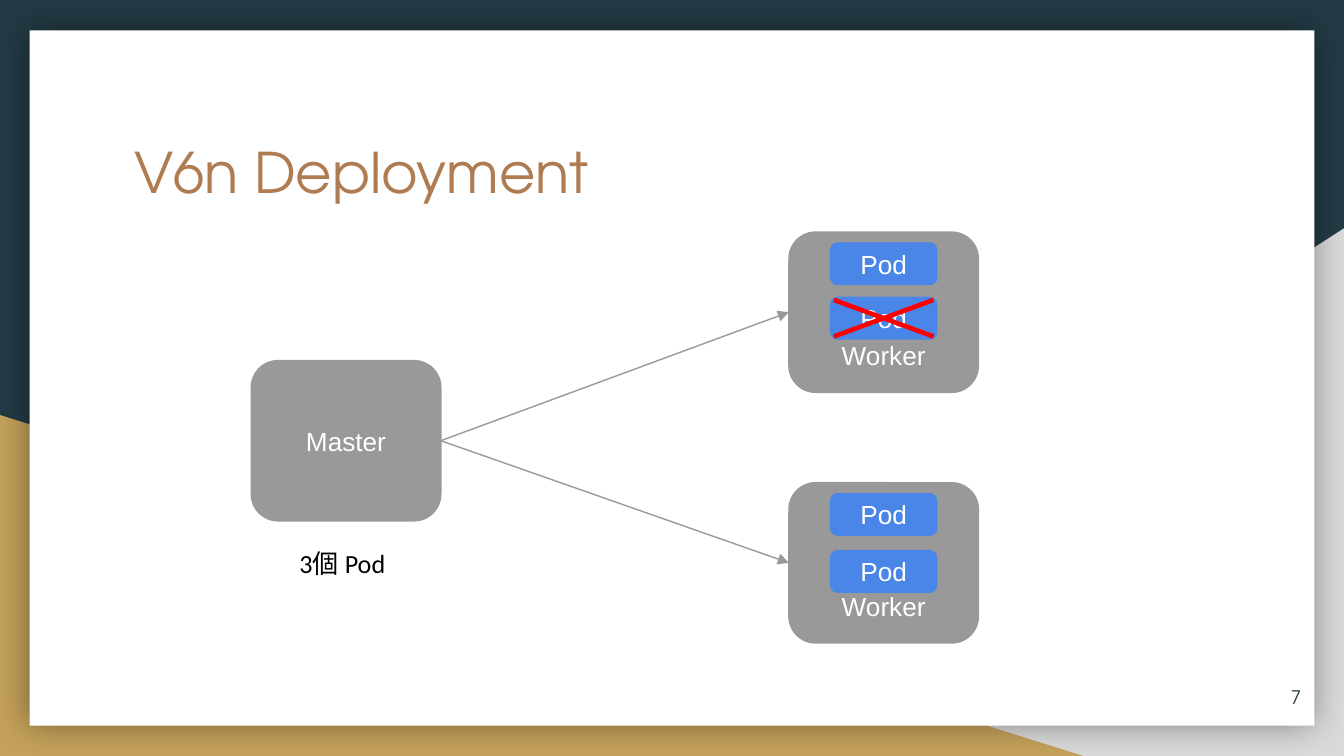
from dataclasses import dataclass
from typing import NamedTuple

from lxml import etree
from pptx import Presentation
from pptx.dml.color import RGBColor
from pptx.enum.shapes import MSO_CONNECTOR, MSO_SHAPE
from pptx.enum.text import MSO_ANCHOR, PP_ALIGN
from pptx.oxml import parse_xml
from pptx.oxml.ns import nsdecls, qn
from pptx.util import Inches, Pt

WIDE, HIGH = 10, 5.625
ROUND, RECT = MSO_SHAPE.ROUNDED_RECTANGLE, MSO_SHAPE.RECTANGLE
WEDGE, CROSS = MSO_SHAPE.RIGHT_TRIANGLE, MSO_SHAPE.MATH_MULTIPLY
TOP, MIDDLE, BOTTOM = MSO_ANCHOR.TOP, MSO_ANCHOR.MIDDLE, MSO_ANCHOR.BOTTOM
LEFT, CENTER, RIGHT = PP_ALIGN.LEFT, PP_ALIGN.CENTER, PP_ALIGN.RIGHT
LEFT_SIDE, RIGHT_SIDE = 1, 3


@dataclass(frozen=True)
class Theme:
    navy: str = "233A44"
    gold: str = "C4A15A"
    silver: str = "D9D9D9"
    white: str = "FFFFFF"
    black: str = "000000"
    copper: str = "AF7B51"
    gray: str = "999999"
    blue: str = "4A86E8"
    red: str = "FF0000"
    head: str = "TeX Gyre Adventor"
    body: str = "Arial"
    note: str = "Calibri"
    title: int = 30
    label: int = 14
    small: int = 10
    line: float = 0.75


THEME = Theme()


class Box(NamedTuple):
    """Left, top, width and height in percent of the slide."""
    x: float
    y: float
    w: float
    h: float

    def place(self):
        return (Inches(self.x * WIDE / 100), Inches(self.y * HIGH / 100),
                Inches(self.w * WIDE / 100), Inches(self.h * HIGH / 100))


class Style(NamedTuple):
    size: int
    font: str
    color: str
    align: PP_ALIGN = LEFT
    anchor: MSO_ANCHOR = TOP


class Worker(NamedTuple):
    """Top of a worker and the offsets of its pods, in percent."""
    y: float
    pods: tuple


NODE_W, NODE_H = 14.1, 21.2
MASTER = Box(18.7, 47.7, NODE_W, NODE_H)
WORK_X = 58.7
POD_W, POD_H = 7.9, 5.5
POD_X = WORK_X + (NODE_W - POD_W) / 2
WORKERS = [Worker(30.7, (1.45, 8.65)), Worker(63.85, (1.45, 9.0))]
LABEL = Style(THEME.label, THEME.body, THEME.white, CENTER, MIDDLE)


def write(shape, text: str, style: Style) -> None:
    frame = shape.text_frame
    frame.text = text
    frame.word_wrap = True
    frame.vertical_anchor = style.anchor
    frame.margin_left = frame.margin_right = Inches(0.1)
    frame.margin_top = frame.margin_bottom = Inches(0.1)
    para = frame.paragraphs[0]
    para.alignment = style.align
    font = para.runs[0].font
    font.size, font.name = Pt(style.size), style.font
    font.color.rgb = RGBColor.from_string(style.color)


def add_text(slide, box: Box, text: str, style: Style) -> None:
    write(slide.shapes.add_textbox(*box.place()), text, style)


def add_shape(slide, kind: MSO_SHAPE, box: Box, color: str, edge: bool = False):
    shape = slide.shapes.add_shape(kind, *box.place())
    shape.shadow.inherit = False
    shape.fill.solid()
    shape.fill.fore_color.rgb = RGBColor.from_string(color)
    if edge:
        shape.line.color.rgb = RGBColor.from_string(color)
        shape.line.width = Pt(THEME.line)
    else:
        shape.line.fill.background()
    return shape


def add_node(slide, box: Box, text: str, color: str, anchor: MSO_ANCHOR = MIDDLE):
    node = add_shape(slide, ROUND, box, color, edge=True)
    write(node, text, LABEL._replace(anchor=anchor))
    return node


def add_arrow(slide, start, end) -> None:
    arrow = slide.shapes.add_connector(MSO_CONNECTOR.STRAIGHT, 0, 0, 0, 0)
    arrow.begin_connect(start, RIGHT_SIDE)
    arrow.end_connect(end, LEFT_SIDE)
    arrow.line.color.rgb = RGBColor.from_string(THEME.gray)
    arrow.line.width = Pt(THEME.line)
    etree.SubElement(arrow.line._get_or_add_ln(), qn("a:tailEnd"), type="triangle")
    etree.SubElement(arrow._element.spPr, qn("a:effectLst"))


def add_glow(shape) -> None:
    """Give the shape a soft shadow on all sides."""
    props = shape._element.spPr
    props.remove(props.find(qn("a:effectLst")))
    props.append(parse_xml(
        f'<a:effectLst {nsdecls("a")}><a:outerShdw blurRad="{Pt(18)}" dist="0" '
        f'algn="ctr" rotWithShape="0"><a:srgbClr val="{THEME.black}">'
        '<a:alpha val="40000"/></a:srgbClr></a:outerShdw></a:effectLst>'))


def add_back(slide) -> None:
    fill = slide.background.fill
    fill.solid()
    fill.fore_color.rgb = RGBColor.from_string(THEME.navy)
    wedge = add_shape(slide, WEDGE, Box(39.2, 30.2, 60.8, 69.8), THEME.silver)
    wedge._element.spPr.find(qn("a:xfrm")).set("flipH", "1")
    add_shape(slide, WEDGE, Box(0, 54.9, 80.6, 45.1), THEME.gold)
    add_glow(add_shape(slide, RECT, Box(2.2, 4, 95.6, 92), THEME.white))


def main() -> None:
    deck = Presentation()
    deck.slide_width, deck.slide_height = Inches(WIDE), Inches(HIGH)
    slide = deck.slides.add_slide(deck.slide_layouts[6])
    add_back(slide)
    add_text(slide, Box(9, 16.4, 82.1, 18.5), "V6n Deployment",
             Style(THEME.title, THEME.head, THEME.copper))
    add_text(slide, Box(91.8, 88.4, 6, 7.6), "7",
             Style(THEME.small, THEME.head, THEME.navy, RIGHT, MIDDLE))

    master = add_node(slide, MASTER, "Master", THEME.gray)
    add_text(slide, Box(21.3, 70.6, 9, 7.8), "3個 Pod",
             Style(THEME.label, THEME.note, THEME.black))
    for work in WORKERS:
        box = Box(WORK_X, work.y, NODE_W, NODE_H)
        node = add_node(slide, box, "Worker", THEME.gray, BOTTOM)
        add_arrow(slide, master, node)
        for gap in work.pods:
            add_node(slide, Box(POD_X, work.y + gap, POD_W, POD_H), "Pod", THEME.blue)

    cross = add_shape(slide, CROSS, Box(WORK_X, 37.5, NODE_W, 9.2), THEME.red, edge=True)
    cross.adjustments[0] = 0.047
    deck.save("out.pptx")


if __name__ == "__main__":
    main()
